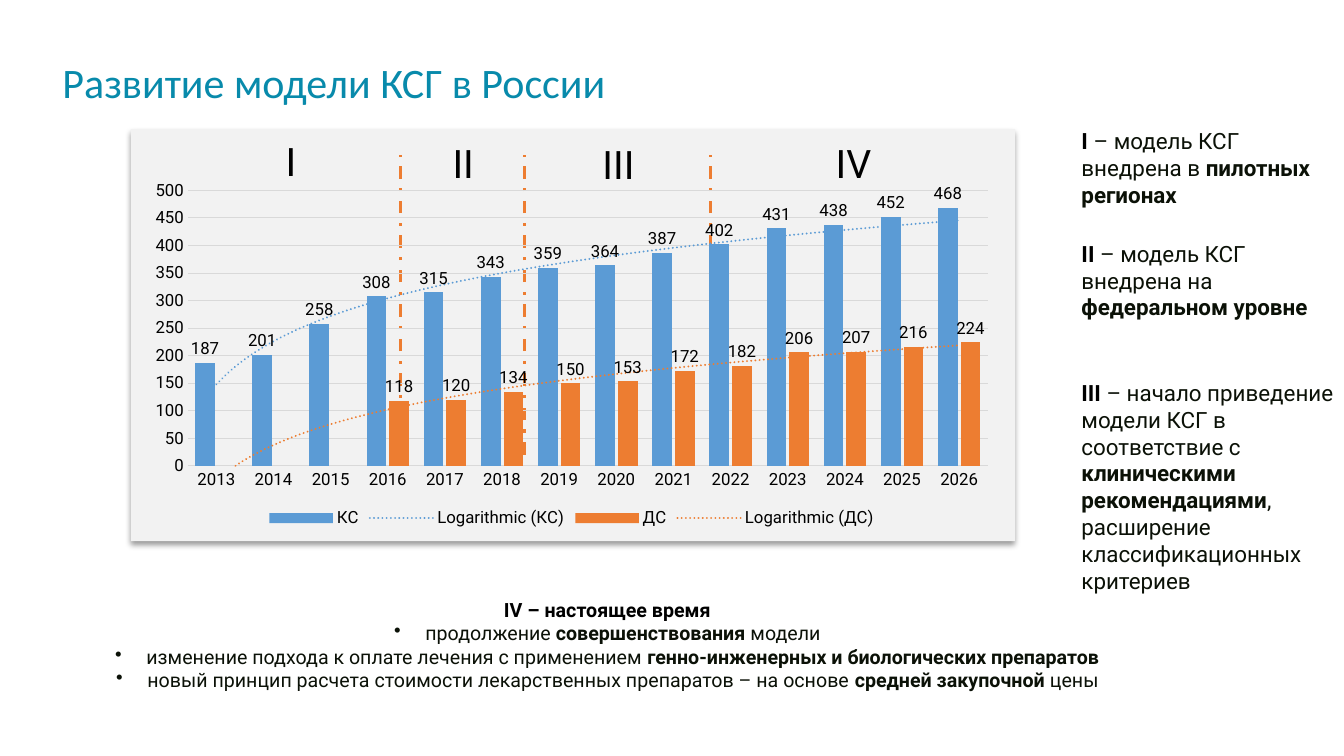
from lxml.etree import SubElement
from pptx import Presentation
from pptx.chart.data import CategoryChartData
from pptx.dml.color import RGBColor
from pptx.enum.chart import XL_CHART_TYPE, XL_LABEL_POSITION, XL_LEGEND_POSITION, XL_TICK_MARK
from pptx.enum.dml import MSO_LINE
from pptx.enum.shapes import MSO_CONNECTOR, MSO_SHAPE
from pptx.enum.text import MSO_ANCHOR, MSO_AUTO_SIZE, PP_ALIGN
from pptx.oxml import parse_xml
from pptx.oxml.ns import nsdecls, qn
from pptx.util import Inches, Pt

WIDTH, HEIGHT = Inches(13.33), Inches(7.5)
COLORS = {"panel": "F2F2F2", "black": "000000", "body": "0B1107", "title": "088AAB",
          "grid": "D9D9D9", "blue": "5B9BD5", "orange": "ED7D31"}
YEARS = [str(year) for year in range(2013, 2027)]
SERIES = [
    ("КС", "blue", [187, 201, 258, 308, 315, 343, 359, 364, 387, 402, 431, 438, 452, 468]),
    ("ДС", "orange", [None, None, None, 118, 120, 134, 150, 153, 172, 182, 206, 207, 216, 224]),
]
STAGE_BORDERS = [29.78, 39, 52.88]
STAGES = [("I", 18.23, 17.87), ("II", 31.05, 18.13), ("III", 42.6, 18.27), ("IV", 60.08, 18.13)]
STAGE_NOTES = [
    ("**I **– модель КСГ внедрена в **пилотных регионах**", 16.13, 18.9, 12.13),
    ("**II** – модель КСГ внедрена на **федеральном уровне**", 31.07, 18.45, 15.73),
    ("**III** – начало приведение модели КСГ в соответствие с **клиническими рекомендациями**, "
     "расширение классификационных критериев", 49.47, 20.35, 30.13),
]
CURRENT_STAGE = [
    "**IV – настоящее время**",
    "продолжение **совершенствования** модели",
    "изменение подхода к оплате лечения с применением "
    "**генно-инженерных и биологических препаратов**",
    "новый принцип расчета стоимости лекарственных препаратов – на основе "
    "**средней закупочной **цены",
]


def color(name):
    return RGBColor.from_string(COLORS[name])


def place(left, top, width, height):
    """Turn percentages of the slide into lengths."""
    return [int(share * side / 100) for share, side in
            zip((left, top, width, height), (WIDTH, HEIGHT, WIDTH, HEIGHT))]


def format_font(font, size, name="black", family="Roboto", bold=False):
    font.size, font.name, font.bold = Pt(size), family, bold
    font.color.rgb = color(name)


def add_bullet(paragraph):
    properties = paragraph._p.get_or_add_pPr()
    properties.set("marL", str(Inches(0.31)))
    properties.set("indent", str(-Inches(0.31)))
    SubElement(properties, qn("a:buChar"), char="•")


def write(shape, *texts, size, name="body", lead="black", family="Roboto",
          align=PP_ALIGN.LEFT, anchor=MSO_ANCHOR.TOP, fit=MSO_AUTO_SIZE.NONE, bullets_from=None):
    """Fill a shape with paragraphs; ** encloses bold words, an opening bold part is the lead."""
    frame = shape.text_frame
    frame.word_wrap, frame.auto_size, frame.vertical_anchor = True, fit, anchor
    for number, text in enumerate(texts):
        paragraph = frame.add_paragraph() if number else frame.paragraphs[0]
        paragraph.alignment = align
        if bullets_from is not None and number >= bullets_from:
            add_bullet(paragraph)
        parts = text.split("**")
        for index, part in enumerate(parts):
            if part:
                run = paragraph.add_run()
                run.text = part
                is_lead = index == 1 and not parts[0]
                format_font(run.font, size, lead if is_lead else name, family, index % 2 == 1)


def add_text(slide, box, *texts, **formats):
    write(slide.shapes.add_textbox(*place(*box)), *texts, **formats)


def add_panel(slide, box):
    panel = slide.shapes.add_shape(MSO_SHAPE.RECTANGLE, *place(*box))
    panel.fill.solid()
    panel.fill.fore_color.rgb = color("panel")
    panel.line.fill.background()
    panel.shadow.inherit = False
    effects = panel._element.spPr.find(qn("a:effectLst"))
    shadow = SubElement(effects, qn("a:outerShdw"), blurRad=str(Pt(4)), dist=str(Pt(3)),
                        dir="5400000", algn="t", rotWithShape="0")
    tint = SubElement(shadow, qn("a:srgbClr"), val=COLORS["black"])
    SubElement(tint, qn("a:alpha"), val="40000")


def add_border(slide, left, bottom=60.13, top=20.53):
    x, y_bottom, _, _ = place(left, bottom, 0, 0)
    _, y_top, _, _ = place(left, top, 0, 0)
    border = slide.shapes.add_connector(MSO_CONNECTOR.STRAIGHT, x, y_bottom, x, y_top)
    border.line.color.rgb = color("orange")
    border.line.width = Pt(2.25)
    border.line.dash_style = MSO_LINE.DASH_DOT
    SubElement(border._element.spPr, qn("a:effectLst"))


def add_trendline(series, name):
    trendline = parse_xml(
        f'<c:trendline {nsdecls("c", "a")}><c:spPr><a:ln w="{Pt(1.5)}" cap="rnd"><a:solidFill>'
        f'<a:srgbClr val="{COLORS[name]}"/></a:solidFill><a:prstDash val="sysDot"/></a:ln></c:spPr>'
        '<c:trendlineType val="log"/><c:dispRSqr val="0"/><c:dispEq val="0"/></c:trendline>')
    series._element.find(qn("c:cat")).addprevious(trendline)


def format_series(series, name):
    series.format.fill.solid()
    series.format.fill.fore_color.rgb = color(name)
    series.invert_if_negative = False
    labels = series.data_labels
    labels.show_value = True
    labels.position = XL_LABEL_POSITION.OUTSIDE_END
    format_font(labels.font, 12)
    add_trendline(series, name)


def format_axes(chart):
    for axis in (chart.category_axis, chart.value_axis):
        axis.major_tick_mark = axis.minor_tick_mark = XL_TICK_MARK.NONE
        format_font(axis.tick_labels.font, 12)
    values = chart.value_axis
    values.minimum_scale = 0
    values.format.line.fill.background()
    for line in (chart.category_axis.format.line, values.major_gridlines.format.line):
        line.color.rgb = color("grid")
        line.width = Pt(0.75)


def format_legend(chart):
    chart.has_legend = True
    legend = chart.legend
    legend.position = XL_LEGEND_POSITION.BOTTOM
    legend.include_in_layout = False
    format_font(legend.font, 12)
    for index in (3, 2):
        entry = parse_xml(f'<c:legendEntry {nsdecls("c")}><c:idx val="{index}"/>'
                          '<c:delete val="1"/></c:legendEntry>')
        legend._element.find(qn("c:legendPos")).addnext(entry)


def clear_background(chart):
    space = chart._chartSpace
    clear = f'<c:spPr {nsdecls("c", "a")}><a:noFill/><a:ln><a:noFill/></a:ln></c:spPr>'
    space.find(qn("c:chart")).addnext(parse_xml(clear))
    space.chart.plotArea.append(parse_xml(clear))


def add_growth_chart(slide, box):
    data = CategoryChartData()
    data.categories = YEARS
    for title, _, values in SERIES:
        data.add_series(title, values)
    chart = slide.shapes.add_chart(XL_CHART_TYPE.COLUMN_CLUSTERED, *place(*box), data).chart
    chart.has_title = False
    format_font(chart.font, 12)
    plot = chart.plots[0]
    plot.gap_width, plot.overlap, plot.vary_by_categories = 75, -15, False
    for series, (_, name, _) in zip(plot.series, SERIES):
        format_series(series, name)
    format_axes(chart)
    format_legend(chart)
    clear_background(chart)


def main():
    presentation = Presentation()
    presentation.slide_width, presentation.slide_height = WIDTH, HEIGHT
    slide = presentation.slides.add_slide(presentation.slide_layouts[5])
    title = slide.shapes.title
    title.left, title.top, title.width, title.height = place(3.9, 0, 64.5, 21.73)
    write(title, "Развитие модели КСГ в России", size=30, name="title", family="Calibri",
          anchor=MSO_ANCHOR.MIDDLE)
    add_panel(slide, (9.75, 17.07, 65.78, 54.53))
    for left in STAGE_BORDERS:
        add_border(slide, left)
    for numeral, left, top in STAGES:
        add_text(slide, (left, top, 6.83, 6.93), numeral, size=28, name="black",
                 align=PP_ALIGN.CENTER, anchor=MSO_ANCHOR.MIDDLE)
    add_growth_chart(slide, (10.28, 22.93, 64.5, 47.47))
    add_text(slide, (5.03, 74.67, 80.33, 21.2), *CURRENT_STAGE, size=14, bullets_from=1,
             align=PP_ALIGN.CENTER, anchor=MSO_ANCHOR.MIDDLE)
    for note, top, width, height in STAGE_NOTES:
        add_text(slide, (79.73, top, width, height), note, size=16,
                 fit=MSO_AUTO_SIZE.SHAPE_TO_FIT_TEXT)
    presentation.save("out.pptx")


if __name__ == "__main__":
    main()
